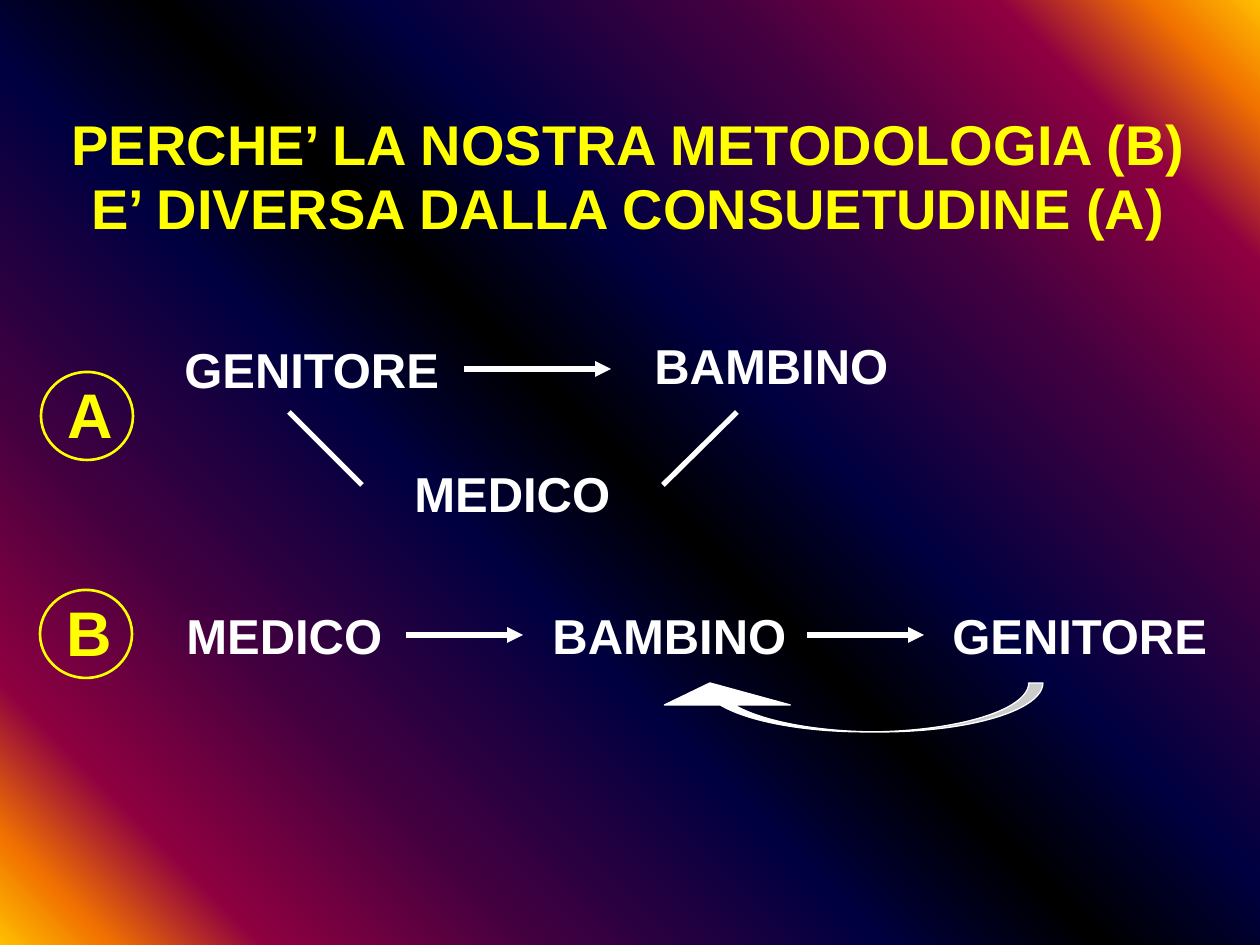
import pptx
import pptx.util
import pptx.dml.color
import pptx.enum.shapes
import pptx.enum.text
import pptx.oxml
import pptx.oxml.ns
from lxml import etree

PX = 914400 // 126
HUES = {"gold": "FFBF00", "orange": "F27300", "wine": "8F0040", "plum": "400040",
        "navy": "000040", "black": "000000", "yellow": "FFFF00", "white": "FFFFFF"}
HALF = [(0, "gold"), (5, "orange"), (12, "wine"), (25, "plum"), (40, "navy")]
TITLE = "PERCHE’ LA NOSTRA METODOLOGIA (B) E’ DIVERSA DALLA CONSUETUDINE (A)"
WIDTHS = {"GENITORE": 281, "BAMBINO": 260, "MEDICO": 222}
WORDS = [
    ("GENITORE", 172, 333), ("BAMBINO", 642, 329), ("MEDICO", 402, 457),
    ("MEDICO", 174, 599), ("BAMBINO", 540, 599), ("GENITORE", 940, 599),
]
MARKS = [("A", 41, 372), ("B", 40, 590)]
LINES = [
    (464, 369, 611, 369, True), (289, 412, 362, 485, False),
    (737, 412, 663, 485, False), (406, 635, 523, 635, True),
    (807, 635, 924, 635, True),
]
ARROW = (647, 683, 396, 49)
BENDS = (0.29, 2.57, 0.45)

qn = pptx.oxml.ns.qn
Pt = pptx.util.Pt
Kind = pptx.enum.shapes.MSO_SHAPE


def tint(hue):
    return pptx.dml.color.RGBColor.from_string(HUES[hue])


def scale(*box):
    return [n * PX for n in box]


def write(text, box, size, hue, wrap=False):
    frame = slide.shapes.add_textbox(*scale(*box)).text_frame
    frame.word_wrap = wrap
    if not wrap:
        frame.auto_size = pptx.enum.text.MSO_AUTO_SIZE.SHAPE_TO_FIT_TEXT
    frame.text = text
    font = frame.paragraphs[0].runs[0].font
    font.name, font.size, font.bold = "Arial", Pt(size), True
    font.color.rgb = tint(hue)
    return frame


def draw(kind, box, hue, width):
    shape = slide.shapes.add_shape(kind, *scale(*box))
    shape.shadow.inherit = False
    shape.line.color.rgb = tint(hue)
    shape.line.width = Pt(width)
    return shape


def link(x1, y1, x2, y2, head):
    line = slide.shapes.add_connector(
        pptx.enum.shapes.MSO_CONNECTOR.STRAIGHT, *scale(x1, y1, x2, y2))
    line.line.color.rgb = tint("white")
    line.line.width = Pt(3)
    if head:
        etree.SubElement(line.line._get_or_add_ln(), qn("a:tailEnd"), type="triangle")
    etree.SubElement(line._element.spPr, qn("a:effectLst"))


def paint():
    fill = slide.background.fill
    fill.gradient()
    fill.gradient_angle = 45
    stops = slide._element.find(".//" + qn("a:gsLst"))
    for stop in list(stops):
        stops.remove(stop)
    back = [(100 - at, hue) for at, hue in reversed(HALF)]
    for at, hue in HALF + [(50, "black")] + back:
        stop = etree.SubElement(stops, qn("a:gs"), pos=str(at * 1000))
        etree.SubElement(stop, qn("a:srgbClr"), val=HUES[hue])


deck = pptx.Presentation()
deck.slide_width, deck.slide_height = scale(1260, 945)
slide = deck.slides.add_slide(deck.slide_layouts[6])
paint()

title = write(TITLE, (26, 105, 1205, 147), 32, "yellow", True)
title.margin_left = title.margin_right = 30 * PX
title.vertical_anchor = pptx.enum.text.MSO_ANCHOR.MIDDLE
title.paragraphs[0].alignment = pptx.enum.text.PP_ALIGN.CENTER
title.paragraphs[0].line_spacing = 0.95

for word, x, y in WORDS:
    write(word, (x, y, WIDTHS[word], 72), 28, "white")
for mark, x, y in MARKS:
    write(mark, (x + 14, y - 3, 71, 88), 36, "yellow")
    draw(Kind.OVAL, (x, y, 92, 88), "yellow", 1.5).fill.background()
for line in LINES:
    link(*line)

arrow = draw(Kind.CURVED_UP_ARROW, ARROW, "white", 0.75)
arrow.fill.solid()
arrow.fill.fore_color.rgb = tint("white")
for i, bend in enumerate(BENDS):
    arrow.adjustments[i] = bend
arrow._element.spPr.find(qn("a:xfrm")).set("flipH", "1")

deck.save("out.pptx")
